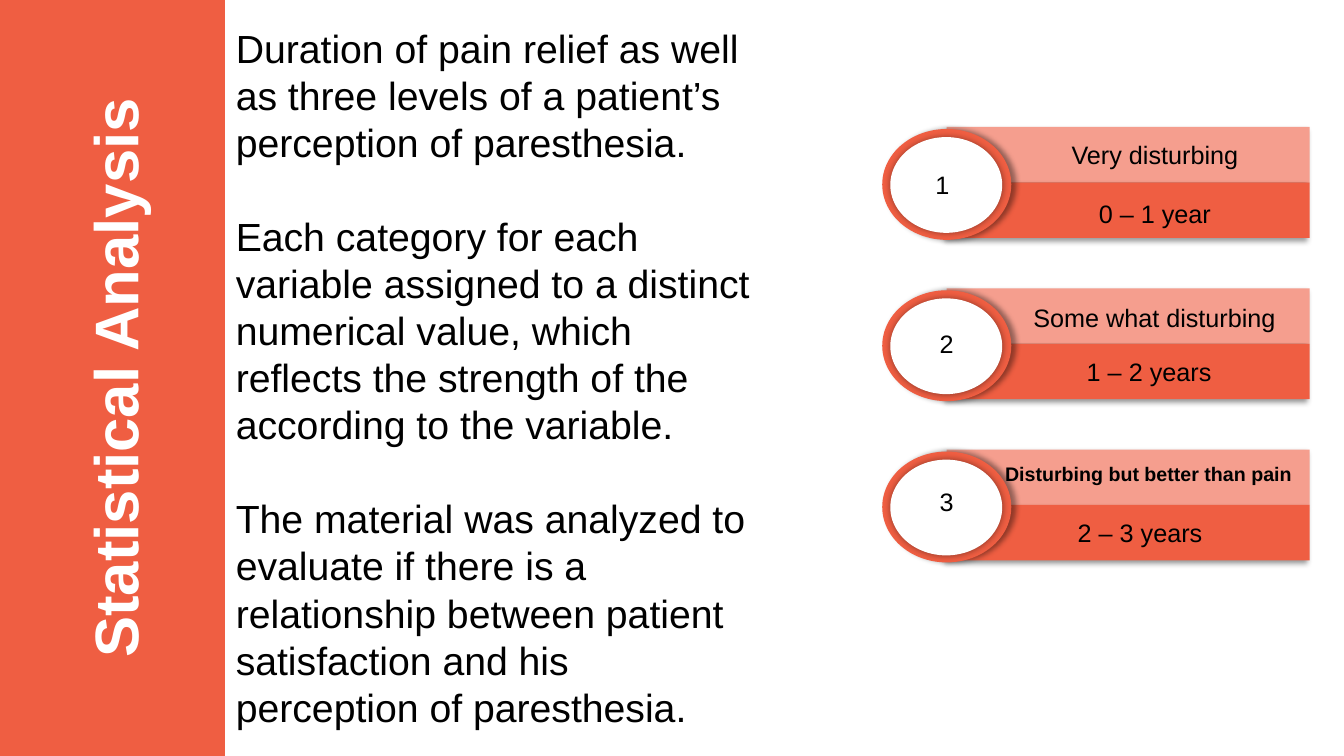
"""Build the Statistical Analysis slide with three rated duration badges."""
from lxml import etree
from pptx import Presentation
from pptx import util as u
from pptx.dml.color import RGBColor
from pptx.enum import shapes, text
from pptx.oxml import parse_xml
from pptx.oxml.ns import nsdecls, qn

CORAL = RGBColor(0xEF, 0x5E, 0x42)
LIGHT_CORAL = RGBColor(0xF5, 0x9E, 0x8E)
WHITE = RGBColor(0xFF, 0xFF, 0xFF)
BLACK = RGBColor(0, 0, 0)
RECTANGLE = shapes.MSO_SHAPE.RECTANGLE
OVAL = shapes.MSO_SHAPE.OVAL

BODY = (
    "Duration of pain relief as well as three levels of a patient’s perception of paresthesia.",
    "Each category for each variable assigned to a distinct numerical value, which reflects "
    "the strength of the according to the variable.",
    "The material was analyzed to evaluate if there is a relationship between patient "
    "satisfaction and his perception of paresthesia.",
)
RATINGS = (
    ("Very disturbing", (10.53, 1.33, 1.87, 0.4), 18, False),
    ("Some what disturbing", (10.15, 2.95, 2.63, 0.4), 18, False),
    ("Disturbing but better than pain", (9.87, 4.53, 3.06, 0.34), 14, True),
)
DURATIONS = (
    ("0 – 1 year", (10.8, 1.92, 1.32, 0.4)),
    ("1 – 2 years", (10.68, 3.49, 1.45, 0.4)),
    ("2 – 3 years", (10.59, 5.08, 1.45, 0.4)),
)
NUMBERS = (
    ("1", (9.18, 1.63, 0.34, 0.4)),
    ("2", (9.22, 3.21, 0.34, 0.4)),
    ("3", (9.22, 4.78, 0.34, 0.4)),
)


class SlideBuilder:
    font = "Arial"

    def __init__(self, slide):
        self.slide = slide

    def place(self, item, area):
        item.left, item.top, item.width, item.height = map(u.Inches, area)

    def style(self, para, size, color=BLACK, bold=False):
        for span in para.runs:
            span.font.name = self.font
            span.font.size = u.Pt(size)
            span.font.bold = bold
            span.font.color.rgb = color

    def title(self, words, area):
        title = self.slide.shapes.title
        self.place(title, area)
        title.rotation = 270
        frame = title.text_frame
        frame.text = words
        frame.word_wrap = True
        frame.auto_size = text.MSO_AUTO_SIZE.NONE
        frame.vertical_anchor = text.MSO_ANCHOR.MIDDLE
        para = frame.paragraphs[0]
        para.alignment = text.PP_ALIGN.CENTER
        para.line_spacing = 1.1
        self.style(para, 44, WHITE, True)
        return title

    def shape(self, parent, kind, area, color):
        shape = parent.shapes.add_shape(kind, *map(u.Inches, area))
        shape.shadow.inherit = False
        shape.fill.solid()
        shape.fill.fore_color.rgb = color
        shape.line.fill.background()
        return shape

    def shadow(self, shape, blur, distance, angle):
        effects = shape.element.spPr.find(qn("a:effectLst"))
        outer = parse_xml(
            f'<a:outerShdw {nsdecls("a")} blurRad="{u.Pt(blur)}" dist="{u.Pt(distance)}" '
            f'dir="{angle * 60000}" algn="ctr" rotWithShape="0"/>')
        color = etree.SubElement(outer, qn("a:srgbClr"), val=str(BLACK))
        etree.SubElement(color, qn("a:alpha"), val="40000")
        effects.append(outer)

    def label(self, words, area, size=18, bold=False):
        box = self.slide.shapes.add_textbox(*map(u.Inches, area))
        frame = box.text_frame
        frame.text = words
        frame.word_wrap = False
        frame.auto_size = text.MSO_AUTO_SIZE.SHAPE_TO_FIT_TEXT
        self.style(frame.paragraphs[0], size, bold=bold)

    def body(self, paragraphs, area, size):
        box = self.slide.shapes.add_textbox(*map(u.Inches, area))
        frame = box.text_frame
        frame.text = "\n".join(paragraphs)
        frame.word_wrap = True
        frame.auto_size = text.MSO_AUTO_SIZE.SHAPE_TO_FIT_TEXT
        for index, para in enumerate(frame.paragraphs):
            para.space_before = u.Pt(size * 1.2 if index else 0)
            self.style(para, size)

    def badge(self, top):
        group = self.slide.shapes.add_group_shape()
        parts = (
            (RECTANGLE, (9.39, top, 3.6, 0.55), LIGHT_CORAL, (4, 3, 135)),
            (RECTANGLE, (9.39, top + 0.55, 3.6, 0.55), CORAL, (4, 3, 135)),
            (OVAL, (8.75, top + 0.02, 1.28, 1.1), CORAL, (4, 3, 0)),
            (OVAL, (8.83, top + 0.1, 1.11, 0.95), WHITE, (5, 0, 0)),
        )
        for kind, area, color, shadow in parts:
            self.shadow(self.shape(group, kind, area, color), *shadow)


def main():
    deck = Presentation()
    deck.slide_width, deck.slide_height = u.Inches(13.33), u.Inches(7.5)
    page = deck.slides.add_slide(deck.slide_layouts[5])
    builder = SlideBuilder(page)
    title = builder.title("Statistical Analysis", (-2.28, 3.18, 6.74, 1.14))
    sidebar = builder.shape(page, RECTANGLE, (0, 0, 2.23, 7.5), CORAL)
    title.element.addprevious(sidebar.element)
    builder.body(BODY, (2.24, 0.19, 5.41, 7.17), 28)
    for index in range(len(RATINGS)):
        builder.badge(1.26 + 1.6 * index)
    for label in RATINGS + DURATIONS + NUMBERS:
        builder.label(*label)
    deck.save("out.pptx")


if __name__ == "__main__":
    main()
